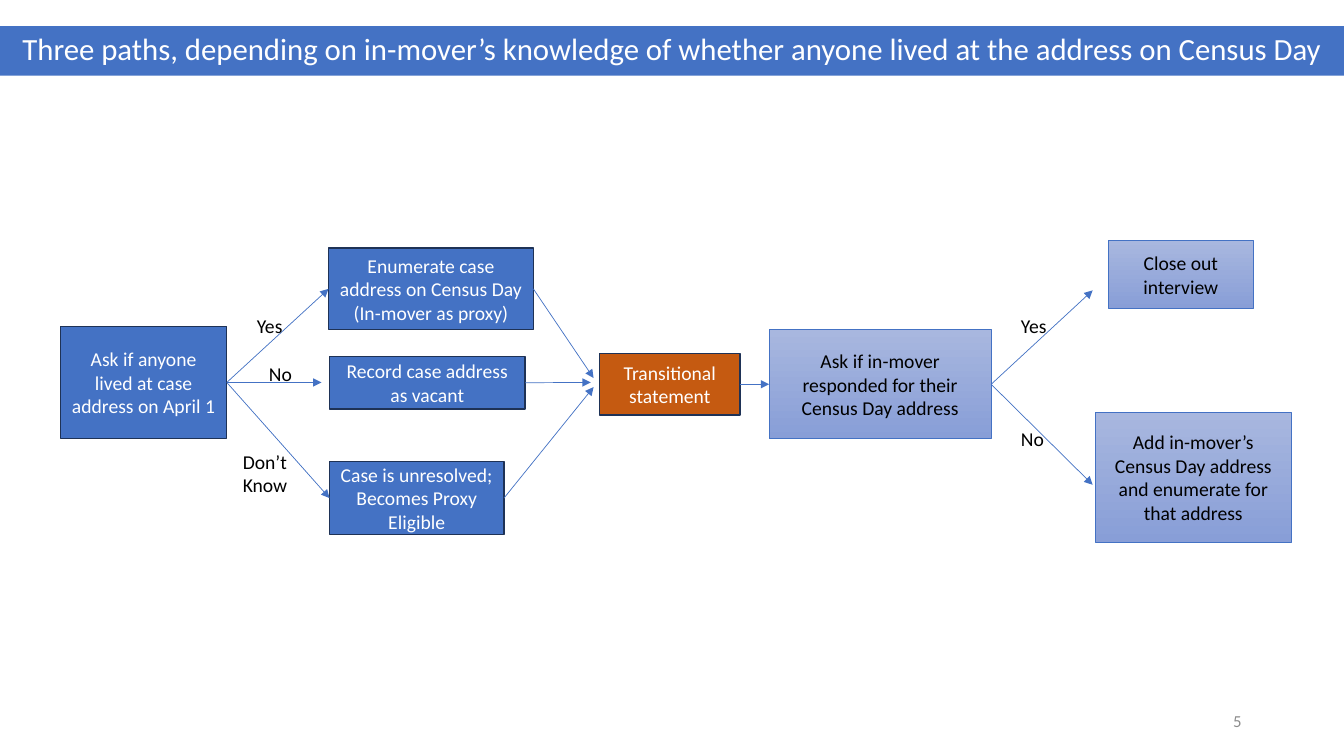
import lxml.etree
import pptx
import pptx.dml.color
import pptx.enum.shapes
import pptx.enum.text
import pptx.oxml.ns
import pptx.util

Pt = pptx.util.Pt
RGBColor = pptx.dml.color.RGBColor
PP_ALIGN = pptx.enum.text.PP_ALIGN
MSO_ANCHOR = pptx.enum.text.MSO_ANCHOR

BLUE = RGBColor(0x44, 0x72, 0xC4)
NAVY = RGBColor(0x1E, 0x32, 0x56)
ORANGE = RGBColor(0xC5, 0x5A, 0x11)
PALE_TOP = RGBColor(0xA8, 0xB7, 0xDF)
PALE_BOTTOM = RGBColor(0x88, 0x9E, 0xD7)
GRAY = RGBColor(0x8C, 0x8C, 0x8C)
BLACK = RGBColor(0, 0, 0)
WHITE = RGBColor(0xFF, 0xFF, 0xFF)
LEFT, RIGHT = 1, 3


class FlowSlide:
    font_name = "Calibri"
    text_size = 14

    def __init__(self, presentation):
        self.slide = presentation.slides.add_slide(presentation.slide_layouts[5])
        self.shapes = self.slide.shapes

    def set_text(self, shape, text, color, size=text_size, align=PP_ALIGN.CENTER,
                 anchor=MSO_ANCHOR.MIDDLE):
        frame = shape.text_frame
        frame.text = text
        frame.word_wrap = True
        frame.auto_size = pptx.enum.text.MSO_AUTO_SIZE.NONE
        frame.vertical_anchor = anchor
        paragraph = frame.paragraphs[0]
        paragraph.alignment = align
        font = paragraph.runs[0].font
        font.name, font.size, font.color.rgb = self.font_name, Pt(size), color
        return paragraph

    def title(self, text, top, width, height):
        title = self.shapes.title
        title.left, title.top = Pt(0), Pt(top)
        title.width, title.height = Pt(width), Pt(height)
        title.fill.solid()
        title.fill.fore_color.rgb = BLUE
        self.set_text(title, text, WHITE, 22).line_spacing = 0.9

    def box(self, text, left, top, width, height, fill=BLUE):
        shape = self.shapes.add_shape(
            pptx.enum.shapes.MSO_SHAPE.FLOWCHART_PROCESS,
            Pt(left), Pt(top), Pt(width), Pt(height))
        shape.shadow.inherit = False
        shape.fill.solid()
        shape.fill.fore_color.rgb = fill
        shape.line.color.rgb = NAVY
        shape.line.width = Pt(1)
        self.set_text(shape, text, WHITE)
        return shape

    def pale_box(self, text, left, top, width, height):
        shape = self.box(text, left, top, width, height)
        shape.fill.gradient()
        shape.fill.gradient_angle = 270
        for stop, color in zip(shape.fill.gradient_stops, (PALE_TOP, PALE_BOTTOM)):
            stop.color.rgb = color
        shape.line.color.rgb = BLUE
        shape.line.width = Pt(0.5)
        self.set_text(shape, text, BLACK)
        return shape

    def arrow(self, source, target=None, end=(0, 0)):
        connector = self.shapes.add_connector(
            pptx.enum.shapes.MSO_CONNECTOR.STRAIGHT, 0, 0, Pt(end[0]), Pt(end[1]))
        connector.begin_connect(source, RIGHT)
        if target is not None:
            connector.end_connect(target, LEFT)
        connector.line.color.rgb = BLUE
        connector.line.width = Pt(0.5)
        qn = pptx.oxml.ns.qn
        properties = connector._element.spPr
        line = properties.find(qn("a:ln"))
        lxml.etree.SubElement(line, qn("a:tailEnd")).set("type", "triangle")
        lxml.etree.SubElement(properties, qn("a:effectLst"))

    def label(self, text, left, top, width=36, height=24.5, color=BLACK,
              size=text_size, align=PP_ALIGN.LEFT, anchor=MSO_ANCHOR.TOP):
        label = self.shapes.add_textbox(Pt(left), Pt(top), Pt(width), Pt(height))
        self.set_text(label, text, color, size, align, anchor)


def main():
    presentation = pptx.Presentation()
    presentation.slide_width, presentation.slide_height = Pt(960), Pt(540)
    flow = FlowSlide(presentation)

    flow.title("Three paths, depending on in-mover’s knowledge of whether anyone "
               "lived at the address on Census Day", 18.7, 960, 35.3)

    ask_lived = flow.box("Ask if anyone lived at case address on April 1",
                         43.2, 233.2, 118.8, 80)
    enumerate_case = flow.box("Enumerate case address on Census Day (In-mover as proxy)",
                              234.7, 177.2, 146.3, 58.3)
    record_vacant = flow.box("Record case address as vacant", 235.4, 254.7, 139.7, 37.4)
    unresolved = flow.box("Case is unresolved; Becomes Proxy Eligible",
                          235.4, 329.8, 124.6, 52)
    transition = flow.box("Transitional statement", 428.4, 252.5, 100.1, 44, ORANGE)
    ask_responded = flow.pale_box("Ask if in-mover responded for their Census Day address",
                                  549.4, 235.6, 158.6, 77.8)
    flow.pale_box("Close out interview", 792, 172, 103, 48.4)
    flow.pale_box("Add in-mover’s Census Day address and enumerate for that address",
                  782.6, 294.5, 139.7, 92.9)

    flow.arrow(ask_lived, enumerate_case)
    flow.arrow(ask_lived, end=(229.7, 273.2))
    flow.arrow(ask_lived, unresolved)
    flow.arrow(enumerate_case, end=(424, 270))
    flow.arrow(record_vacant, end=(422, 273.2))
    flow.arrow(unresolved, end=(424, 276.5))
    flow.arrow(transition, ask_responded)
    for end_top in (207.4, 346.3):
        flow.arrow(ask_responded, end=(780.5, end_top))

    flow.label("Yes", 176.4, 220.5)
    flow.label("No", 185, 255)
    flow.label("Don’t Know", 166.3, 317.8, 46, 41)
    flow.label("Yes", 722.2, 221)
    flow.label("No", 722.2, 301.5)
    flow.label("5", 678, 500.5, 216, 28.8, GRAY, 12, PP_ALIGN.RIGHT, MSO_ANCHOR.MIDDLE)

    presentation.save("out.pptx")


if __name__ == "__main__":
    main()
